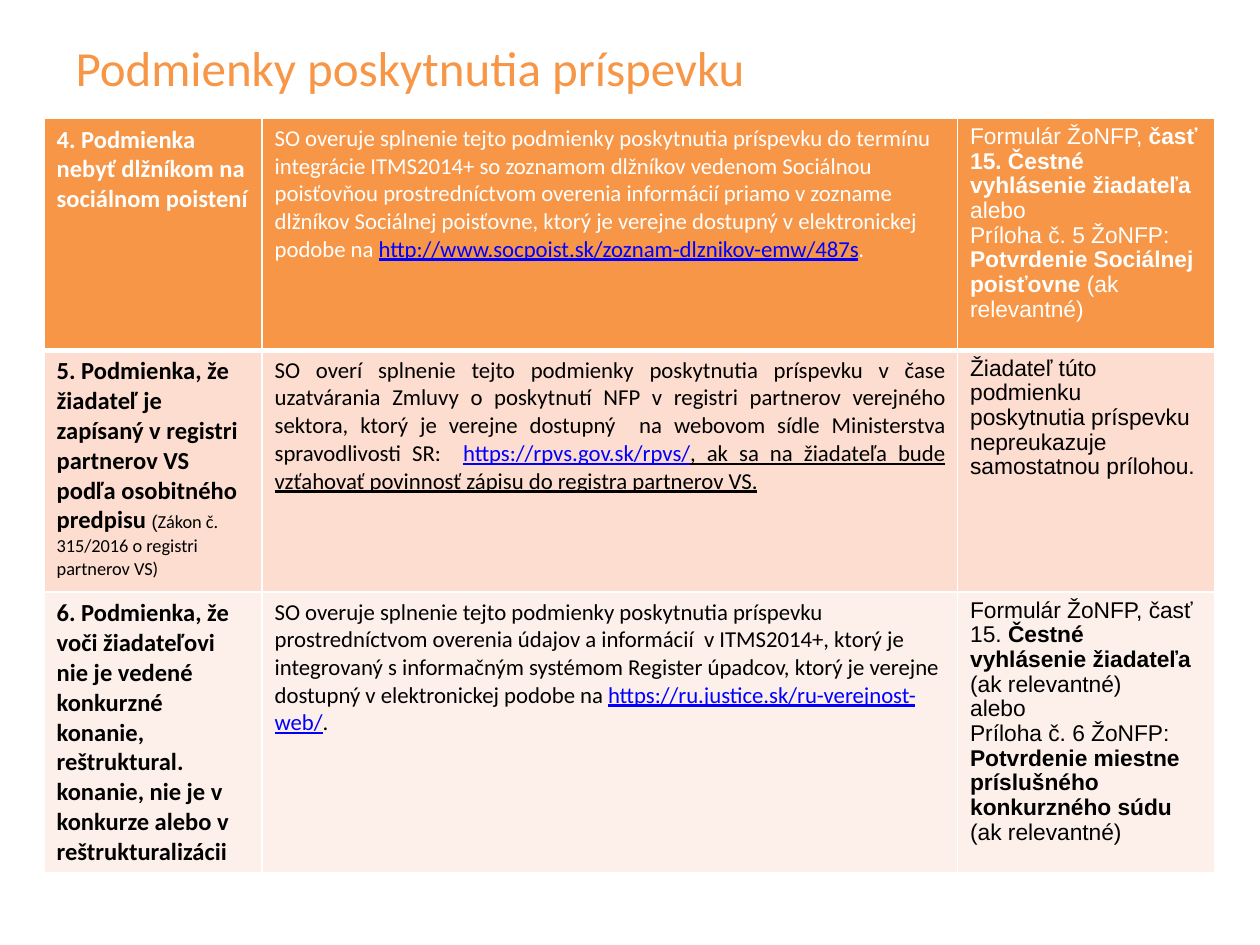
from lxml import etree
from pptx import Presentation
from pptx import util as u
from pptx.dml.color import RGBColor
from pptx.enum import text
from pptx.oxml.ns import qn

ORANGE, WHITE, BLACK, BLUE = "F79646", "FFFFFF", "000000", "0000FF"
LABEL = dict(name="Calibri", size=14, bold=True)
BODY = dict(name="Calibri", size=13)
PROOF = dict(name="Arial", size=13)
BOLD = dict(bold=True)
LINK = dict(color=BLUE, underline=True)
JUSTIFY = dict(alignment=text.PP_ALIGN.JUSTIFY)
TIGHT = dict(line_spacing=0.97)

COLUMN_WIDTHS = [1.73, 5.52, 2.04]
# Each row: height, fill, text colour, bottom border width
ROW_STYLES = [
    (1.84, ORANGE, WHITE, 3),
    (1.92, "FCDDCF", BLACK, 1),
    (2.14, "FDEFE9", BLACK, 1),
]
# Each cell: base font, paragraph format, paragraphs made of (text, font changes)
CONDITIONS = [
    [
        (LABEL, {}, [[("4. Podmienka nebyť dlžníkom na sociálnom poistení", {})]]),
        (BODY, {}, [[
            ("SO overuje splnenie tejto podmienky poskytnutia príspevku do termínu "
             "integrácie ITMS2014+ so zoznamom dlžníkov vedenom Sociálnou poisťovňou "
             "prostredníctvom overenia informácií priamo v zozname dlžníkov Sociálnej "
             "poisťovne, ktorý je verejne dostupný v elektronickej podobe na ", {}),
            ("http://www.socpoist.sk/zoznam-dlznikov-emw/487s", LINK),
            (".", {}),
        ]]),
        (PROOF, TIGHT, [
            [("Formulár ŽoNFP, ", {}), ("časť 15. Čestné vyhlásenie žiadateľa", BOLD)],
            [("alebo", {})],
            [("Príloha č. 5 ŽoNFP: ", {}), ("Potvrdenie Sociálnej poisťovne ", BOLD),
             ("(ak relevantné)", {})],
        ]),
    ],
    [
        (LABEL, {}, [[
            ("5. Podmienka, že žiadateľ je zapísaný v registri partnerov VS podľa "
             "osobitného predpisu ", {}),
            ("(", dict(name="Arial", size=10.5, bold=False)),
            ("Zákon č. 315/2016 o registri partnerov VS)", dict(size=10.5, bold=False)),
        ]]),
        (BODY, JUSTIFY, [[
            ("SO overí splnenie tejto podmienky poskytnutia príspevku v čase uzatvárania "
             "Zmluvy o poskytnutí NFP v registri partnerov verejného sektora, ktorý je "
             "verejne dostupný  na webovom sídle Ministerstva spravodlivosti SR:  ", {}),
            ("https://rpvs.gov.sk/rpvs/", LINK),
            (", ak sa na žiadateľa bude vzťahovať povinnosť zápisu do registra "
             "partnerov VS.", dict(underline=True)),
        ]]),
        (PROOF, TIGHT, [[("Žiadateľ túto podmienku poskytnutia príspevku nepreukazuje "
                          "samostatnou prílohou.", {})]]),
    ],
    [
        (LABEL, {}, [[("6. Podmienka, že voči žiadateľovi nie je vedené konkurzné konanie, "
                       "reštruktural. konanie, nie je v konkurze alebo v "
                       "reštrukturalizácii", {})]]),
        (BODY, {}, [[
            ("SO overuje splnenie tejto podmienky poskytnutia príspevku prostredníctvom "
             "overenia údajov a informácií  v ITMS2014+, ktorý je integrovaný "
             "s informačným systémom Register úpadcov, ktorý je verejne dostupný "
             "v elektronickej podobe na ", {}),
            ("https://ru.justice.sk/ru-verejnost-web/", LINK),
            (".", {}),
        ]]),
        (PROOF, TIGHT, [
            [("Formulár ŽoNFP, časť 15. ", {}), ("Čestné vyhlásenie žiadateľa ", BOLD),
             ("(ak relevantné)", {})],
            [("alebo", {})],
            [("Príloha č. 6 ŽoNFP: ", {}),
             ("Potvrdenie miestne príslušného konkurzného súdu", BOLD),
             (" (ak relevantné)", {})],
        ]),
    ],
]


def rgb(value):
    return RGBColor.from_string(value)


def set_format(target, values):
    for name, value in values.items():
        if name == "color":
            target.color.rgb = rgb(value)
        else:
            setattr(target, name, u.Pt(value) if name == "size" else value)


def set_borders(cell, widths):
    """Draw white cell borders; the fill must be set afterwards to keep XML order."""
    properties = cell._tc.get_or_add_tcPr()
    for side, width in widths.items():
        line = etree.SubElement(properties, qn(f"a:ln{side}"), w=str(u.Pt(width)))
        solid = etree.SubElement(line, qn("a:solidFill"))
        etree.SubElement(solid, qn("a:srgbClr"), val=WHITE)


class SlideBuilder:
    def __init__(self, deck):
        self.slide = deck.slides.add_slide(deck.slide_layouts[5])

    def add_text(self, frame, paragraphs, font, layout):
        for index, spans in enumerate(paragraphs):
            para = frame.add_paragraph() if index else frame.paragraphs[0]
            set_format(para, layout)
            for words, changes in spans:
                span = para.add_run()
                span.text = words
                set_format(span.font, {**font, **changes})

    def title(self, words, left, top, width, height):
        box = self.slide.shapes.title
        box.left, box.top = u.Inches(left), u.Inches(top)
        box.width, box.height = u.Inches(width), u.Inches(height)
        set_format(box.text_frame, dict(vertical_anchor=text.MSO_ANCHOR.MIDDLE,
                                        auto_size=text.MSO_AUTO_SIZE.NONE))
        self.add_text(box.text_frame, [[(words, {})]],
                      dict(name="Calibri", size=28, color=ORANGE),
                      dict(alignment=text.PP_ALIGN.LEFT))

    def table(self, rows, styles, widths, left, top):
        heights = [style[0] for style in styles]
        grid = self.slide.shapes.add_table(
            len(rows), len(widths), u.Inches(left), u.Inches(top),
            u.Inches(sum(widths)), u.Inches(sum(heights))).table
        for column, width in zip(grid.columns, widths):
            column.width = u.Inches(width)
        above = 1
        for row, cells, style in zip(grid.rows, rows, styles):
            height, fill, color, below = style
            row.height = u.Inches(height)
            for cell, (font, layout, paragraphs) in zip(row.cells, cells):
                set_borders(cell, dict(L=1, R=1, T=above, B=below))
                cell.fill.solid()
                cell.fill.fore_color.rgb = rgb(fill)
                # An explicit weight keeps the table style from making the first row bold
                base = {"bold": False, **font, "color": color}
                self.add_text(cell.text_frame, paragraphs, base, layout)
            above = below


def main():
    deck = Presentation()
    deck.slide_width, deck.slide_height = u.Inches(10), u.Inches(7.5)
    page = SlideBuilder(deck)
    page.title("Podmienky poskytnutia príspevku", 0.5, 0.3, 9, 0.46)
    page.table(CONDITIONS, ROW_STYLES, COLUMN_WIDTHS, 0.35, 0.94)
    deck.save("out.pptx")


if __name__ == "__main__":
    main()
